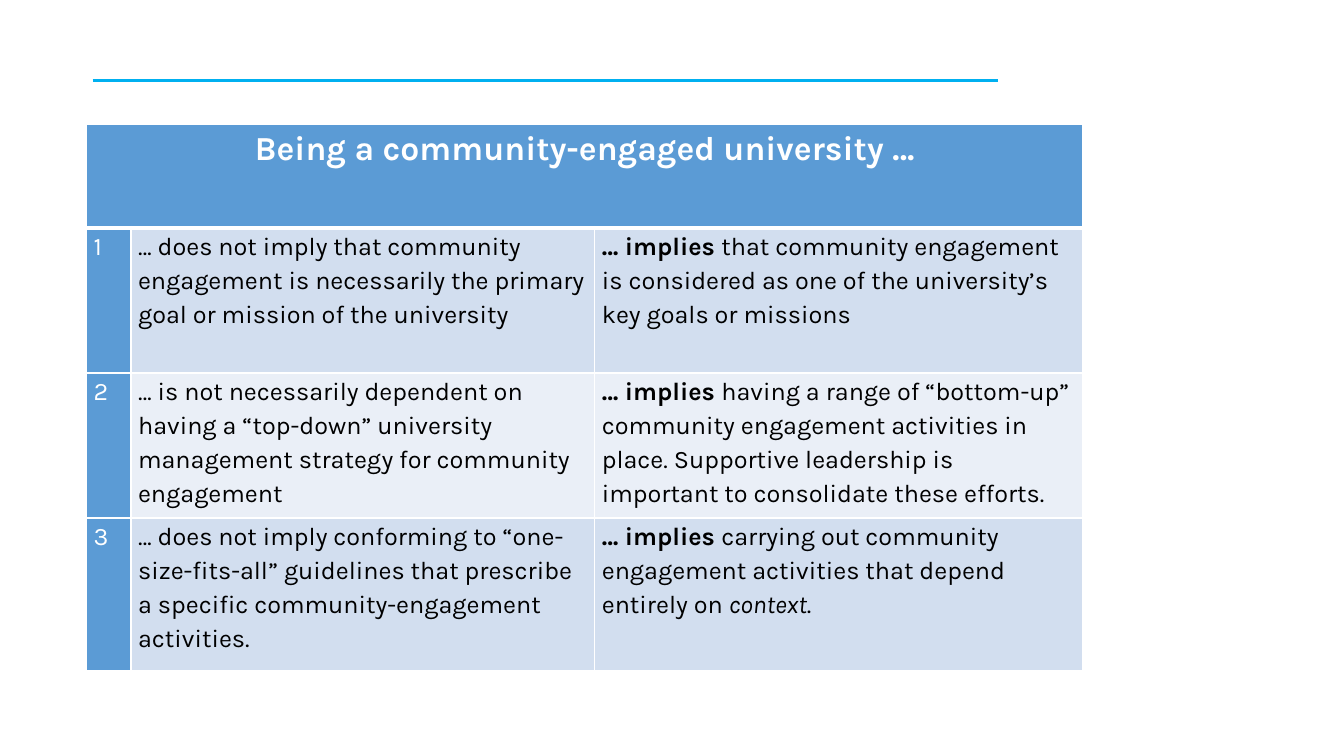
"""Build the slide on what being a community-engaged university implies."""
import pptx
import pptx.dml.color
import pptx.enum.shapes
import pptx.enum.text
import pptx.oxml
import pptx.oxml.ns
import pptx.util
from pptx.util import Inches

COLOURS = {"rule": "00B0F0", "head": "5B9BD5", "odd": "D2DEEF",
           "even": "EAEFF7", "white": "FFFFFF", "black": "000000"}
COLUMN_WIDTHS = [0.44, 4.6, 4.84]
ROW_HEIGHTS = [1.03, 1.44, 1.44, 1.51]
INSETS = {"margin_left": Inches(0.07), "margin_right": Inches(0.07),
          "margin_top": 0, "margin_bottom": 0}
SPACING = {"line_spacing": 1.15, "space_after": pptx.util.Pt(10)}
PLAIN = {"bold": False, "italic": False}
BOLD = {"bold": True, "italic": False}
ITALIC = {"bold": False, "italic": True}

HEADING = "Being a community-engaged university …"
STATEMENTS = [
    ("… does not imply that community engagement is necessarily the primary "
     "goal or mission of the university",
     [("that community engagement is considered as one of the university’s "
       "key goals or missions", PLAIN)]),
    ("… is not necessarily dependent on having a “top-down” university "
     "management strategy for community engagement",
     [("having a range of “bottom-up” community engagement activities in "
       "place. Supportive leadership is important to consolidate these "
       "efforts.", PLAIN)]),
    ("… does not imply conforming to “one-size-fits-all” guidelines that "
     "prescribe a specific community-engagement activities.",
     [("carrying out community engagement activities that depend entirely on ",
       PLAIN), ("context", ITALIC), (".", PLAIN)]),
]


def rgb(name):
    return pptx.dml.color.RGBColor.from_string(COLOURS[name])


def fill_cell(cell, runs, fill, colour, size=18):
    for attribute, value in INSETS.items():
        setattr(cell, attribute, value)
    cell.fill.solid()
    cell.fill.fore_color.rgb = rgb(fill)
    paragraph = cell.text_frame.paragraphs[0]
    for attribute, value in SPACING.items():
        setattr(paragraph, attribute, value)
    for text, emphasis in runs:
        run = paragraph.add_run()
        run.text = text
        run.font.color.rgb = rgb(colour)
        font_format = {"name": "Karla", "size": pptx.util.Pt(size), **emphasis}
        for attribute, value in font_format.items():
            setattr(run.font, attribute, value)


presentation = pptx.Presentation()
presentation.slide_width = Inches(13.33)
presentation.slide_height = Inches(7.5)
slide = presentation.slides.add_slide(presentation.slide_layouts[6])

top_rule = slide.shapes.add_connector(
    pptx.enum.shapes.MSO_CONNECTOR.STRAIGHT,
    Inches(0.92), Inches(0.8), Inches(9.9), Inches(0.8))
top_rule.line.color.rgb = rgb("rule")
top_rule.line.width = pptx.util.Pt(2.25)
top_rule._element.spPr.append(pptx.oxml.parse_xml(
    f'<a:effectLst {pptx.oxml.ns.nsdecls("a")}/>'))

comparison = slide.shapes.add_table(
    len(ROW_HEIGHTS), len(COLUMN_WIDTHS), Inches(0.86), Inches(1.23),
    Inches(sum(COLUMN_WIDTHS)), Inches(sum(ROW_HEIGHTS))).table
for column, width in zip(comparison.columns, COLUMN_WIDTHS):
    column.width = Inches(width)
for row, height in zip(comparison.rows, ROW_HEIGHTS):
    row.height = Inches(height)

heading_cell = comparison.cell(0, 0)
heading_cell.merge(comparison.cell(0, 2))
fill_cell(heading_cell, [(HEADING, BOLD)], "head", "white", 24)
heading_cell.text_frame.paragraphs[0].alignment = pptx.enum.text.PP_ALIGN.CENTER

for number, (denial, implication) in enumerate(STATEMENTS, 1):
    band = "odd" if number % 2 else "even"
    number_cell, denial_cell, implication_cell = comparison.rows[number].cells
    fill_cell(number_cell, [(str(number), PLAIN)], "head", "white")
    fill_cell(denial_cell, [(denial, PLAIN)], band, "black")
    fill_cell(implication_cell, [("… implies ", BOLD), *implication], band, "black")

for row_index, row in enumerate(comparison.rows):
    for cell in row.cells:
        properties = cell._tc.get_or_add_tcPr()
        for position, side in enumerate(["lnL", "lnR", "lnT", "lnB"]):
            under_heading = (row_index, side) in [(0, "lnB"), (1, "lnT")]
            width = pptx.util.Pt(3 if under_heading else 1)
            properties.insert(position, pptx.oxml.parse_xml(
                f'<a:{side} {pptx.oxml.ns.nsdecls("a")} w="{width}"><a:solidFill>'
                f'<a:srgbClr val="{COLOURS["white"]}"/></a:solidFill></a:{side}>'))

presentation.save("out.pptx")
